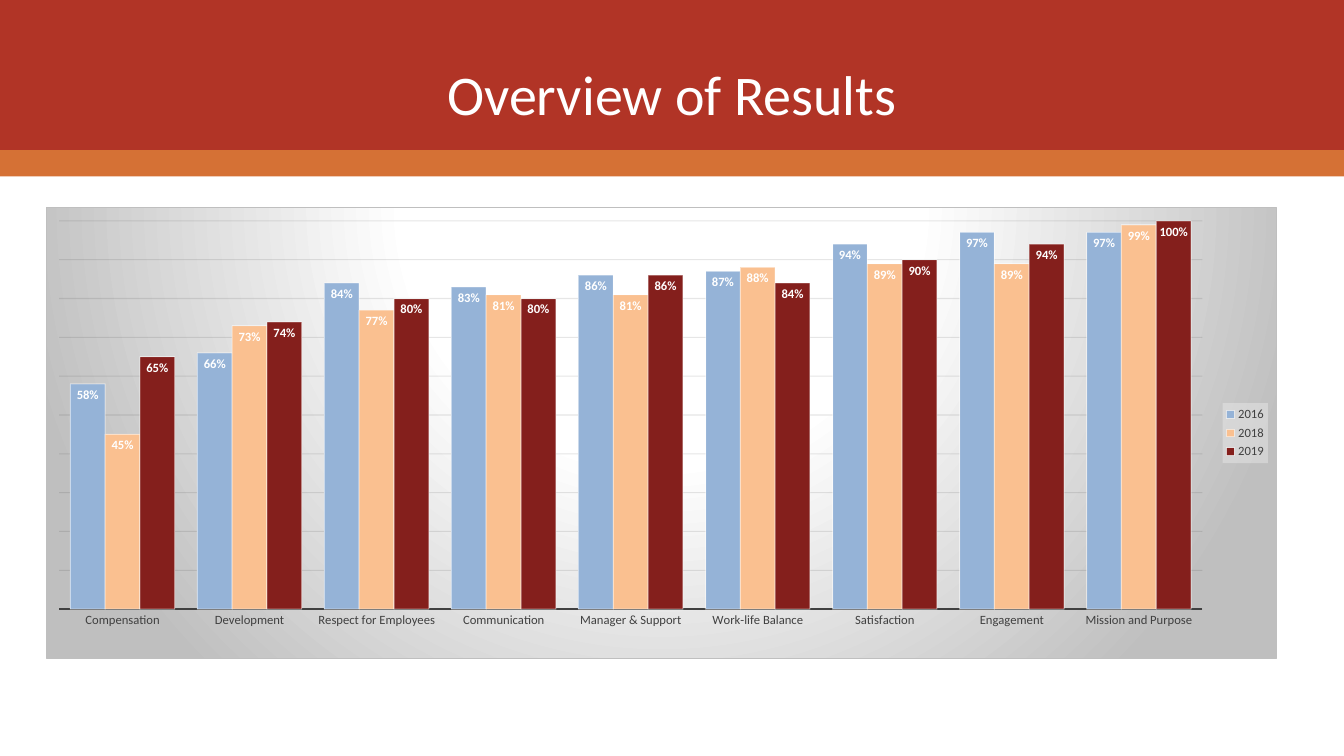
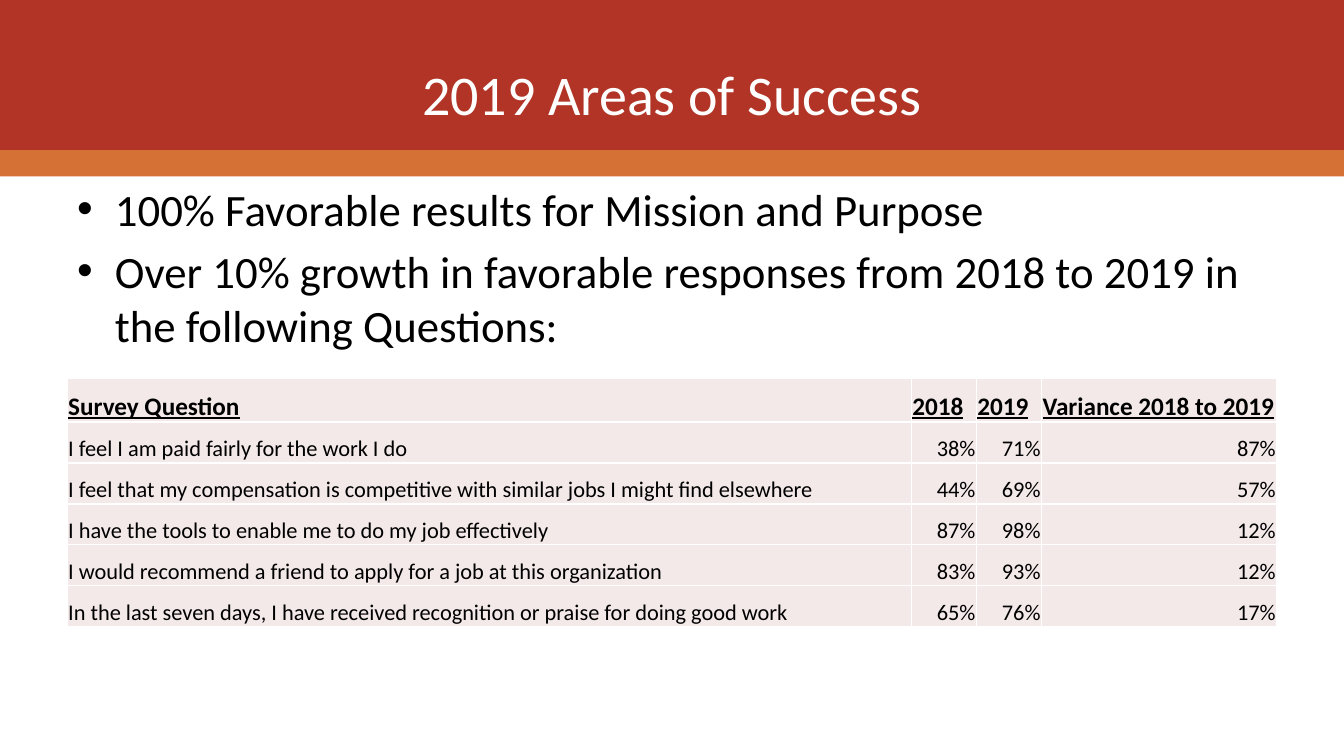
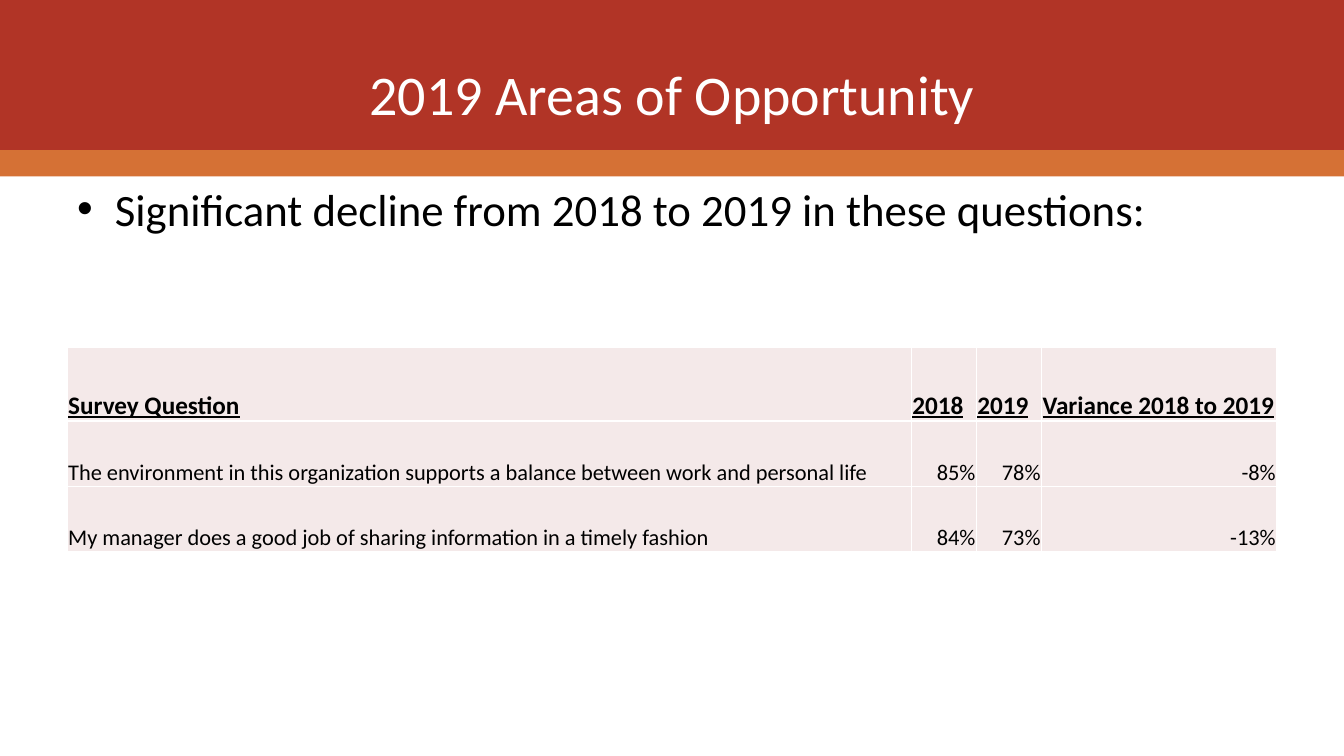
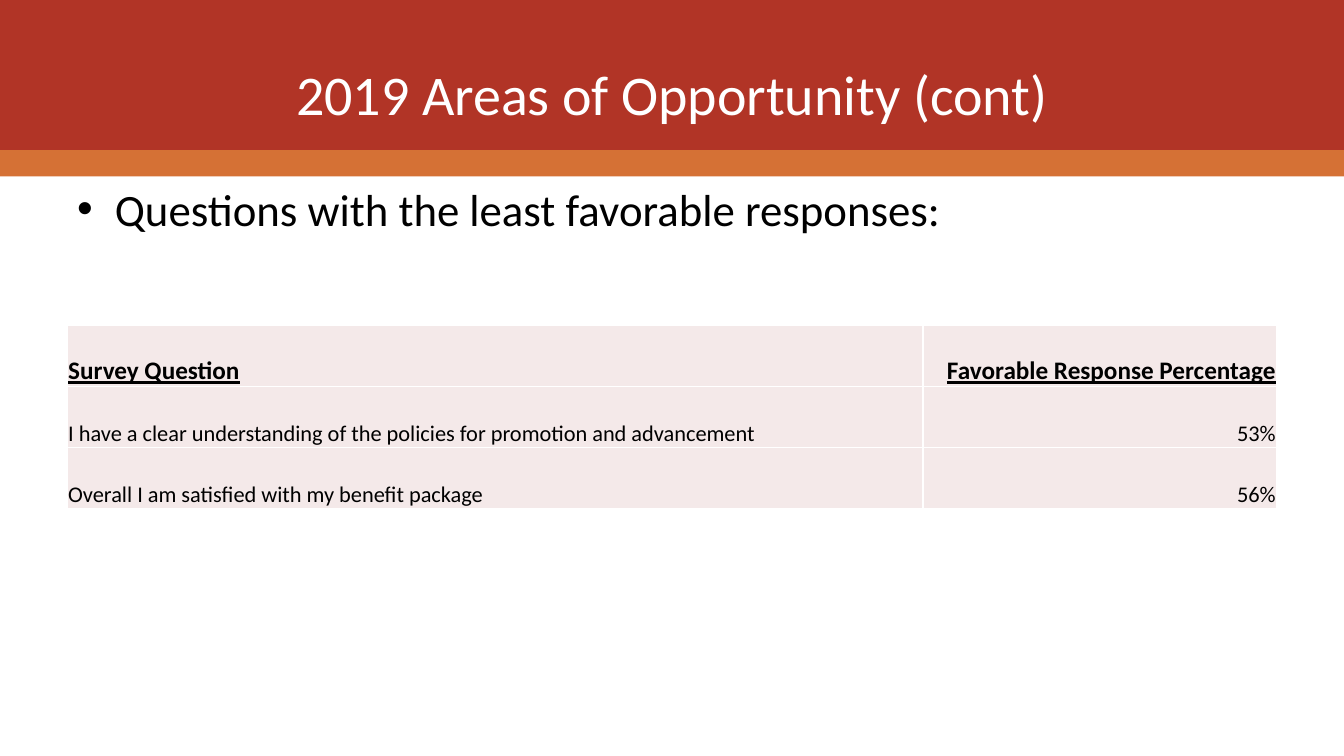
from lxml import etree
from pptx import Presentation
from pptx.chart.data import CategoryChartData
from pptx.dml.color import RGBColor
from pptx.enum.chart import XL_CHART_TYPE, XL_LABEL_POSITION, XL_LEGEND_POSITION, XL_TICK_MARK
from pptx.enum.shapes import MSO_SHAPE
from pptx.enum.text import MSO_ANCHOR, PP_ALIGN
from pptx.oxml import parse_xml
from pptx.oxml.ns import nsdecls, qn
from pptx.util import Pt

RECTANGLE = MSO_SHAPE.RECTANGLE
LEFT, CENTER, RIGHT = PP_ALIGN.LEFT, PP_ALIGN.CENTER, PP_ALIGN.RIGHT
TOP, MIDDLE, BOTTOM = MSO_ANCHOR.TOP, MSO_ANCHOR.MIDDLE, MSO_ANCHOR.BOTTOM
CLUSTERED = XL_CHART_TYPE.COLUMN_CLUSTERED
INSIDE_END = XL_LABEL_POSITION.INSIDE_END
LEGEND_RIGHT = XL_LEGEND_POSITION.RIGHT
NO_TICK = XL_TICK_MARK.NONE

EMU_PER_PX = 9525
WIDTH, HEIGHT = 1280, 720
MARGIN, CONTENT_WIDTH = 64, 1152
FONT = "Calibri"
COLORS = {
    "red": "B13426", "orange": "D57135", "white": "FFFFFF", "black": "000000",
    "cell": "F4E9E9", "dark": "404040", "grid": "0D0D0D", "edge": "BFBFBF",
    "legend": "F2F2F2", "2016": "95B3D7", "2018": "FAC090", "2019": "841F1C",
}
TITLE = {"size": Pt(40), "color": "white"}
BODY = {"size": Pt(32), "color": "black"}
HEADER = {"size": Pt(18), "color": "black", "bold": True, "underline": True}
ENTRY = {"size": Pt(16), "color": "black", "bold": False, "underline": False}
AXIS_TEXT = {"size": Pt(9), "color": "dark"}
VALUE_LABEL = {"size": Pt(9), "color": "white", "bold": True}


def px(length):
    return length * EMU_PER_PX


def rgb(name):
    return RGBColor.from_string(COLORS[name])


def set_font(font, style):
    font.name = FONT
    for attribute, value in style.items():
        if attribute == "color":
            font.color.rgb = rgb(value)
        else:
            setattr(font, attribute, value)


def set_line(line, color, points):
    line.color.rgb = rgb(color)
    line.width = Pt(points)


def set_alpha(colors, percent):
    for color in colors:
        etree.SubElement(color, qn("a:alpha"), val=str(percent * 1000))


class Deck:
    """Holds the shared style and the current slide."""

    def __init__(self):
        self.presentation = Presentation()
        self.presentation.slide_width = px(WIDTH)
        self.presentation.slide_height = px(HEIGHT)
        self.slide = None

    def new_slide(self, title):
        self.slide = self.presentation.slides.add_slide(self.presentation.slide_layouts[6])
        self.band(0, 152, "red")
        self.band(143, 25, "orange")
        self.text(29, 120, [title], TITLE, MIDDLE, CENTER)

    def band(self, top, height, color):
        band = self.slide.shapes.add_shape(RECTANGLE, 0, px(top), px(WIDTH), px(height))
        band.shadow.inherit = False
        band.fill.solid()
        band.fill.fore_color.rgb = rgb(color)
        band.line.fill.background()

    def text(self, top, height, lines, style, anchor, align, bullet=False):
        box = self.slide.shapes.add_textbox(px(MARGIN), px(top), px(CONTENT_WIDTH), px(height))
        frame = box.text_frame
        frame.word_wrap = True
        frame.vertical_anchor = anchor
        for index, line in enumerate(lines):
            paragraph = frame.paragraphs[0] if index == 0 else frame.add_paragraph()
            paragraph.alignment = align
            if index:
                paragraph.space_before = Pt(6)
            if bullet:
                properties = paragraph._p.get_or_add_pPr()
                properties.set("marL", str(px(36)))
                properties.set("indent", str(-px(36)))
                etree.SubElement(properties, qn("a:buFont"), typeface="Arial")
                etree.SubElement(properties, qn("a:buChar"), char="•")
            run = paragraph.add_run()
            run.text = line
            set_font(run.font, style)

    def bullets(self, *lines):
        self.text(168, 475, lines, BODY, TOP, LEFT, bullet=True)

    def table(self, top, columns, heights, rows, header_align=LEFT):
        frame = self.slide.shapes.add_table(
            len(rows), len(columns), px(MARGIN), px(top), px(sum(columns)), px(sum(heights)))
        table = frame.table
        table.horz_banding = False
        for column, width in zip(table.columns, columns):
            column.width = px(width)
        for row_index, (row, height, entries) in enumerate(zip(table.rows, heights, rows)):
            row.height = px(height)
            style, value_align = (ENTRY, RIGHT) if row_index else (HEADER, header_align)
            for column_index, (cell, entry) in enumerate(zip(row.cells, entries)):
                self.cell(cell, entry, style, value_align if column_index else LEFT)

    def cell(self, cell, entry, style, align):
        layout = {"margin_left": px(1), "margin_right": px(1), "margin_top": px(1),
                  "margin_bottom": 0, "vertical_anchor": BOTTOM}
        for attribute, value in layout.items():
            setattr(cell, attribute, value)
        cell.fill.solid()
        cell.fill.fore_color.rgb = rgb("cell")
        for position, side in enumerate(("lnL", "lnR", "lnT", "lnB")):
            cell._tc.tcPr.insert(position, parse_xml(
                f'<a:{side} {nsdecls("a")} w="{Pt(1)}"><a:solidFill>'
                f'<a:srgbClr val="{COLORS["white"]}"/></a:solidFill></a:{side}>'))
        paragraph = cell.text_frame.paragraphs[0]
        paragraph.alignment = align
        run = paragraph.add_run()
        run.text = entry
        set_font(run.font, style)

    def column_chart(self, left, top, width, height, categories, results):
        data = CategoryChartData(number_format="0%")
        data.categories = categories
        for year, shares in results.items():
            data.add_series(year, shares)
        chart = self.slide.shapes.add_chart(
            CLUSTERED, px(left), px(top), px(width), px(height), data).chart
        chart.has_title = False
        set_font(chart.font, {"size": Pt(10), "color": "black"})

        # Columns and their labels
        plot = chart.plots[0]
        plot.gap_width, plot.overlap, plot.vary_by_categories = 65, 0, False
        for series in plot.series:
            series.format.fill.solid()
            series.format.fill.fore_color.rgb = rgb(series.name)
            set_line(series.format.line, "white", 0.75)
            labels = series.data_labels
            label_format = {"show_value": True, "position": INSIDE_END,
                            "number_format": "0%", "number_format_is_linked": False}
            for attribute, value in label_format.items():
                setattr(labels, attribute, value)
            set_font(labels.font, VALUE_LABEL)

        # Axes
        set_font(chart.category_axis.tick_labels.font, AXIS_TEXT)
        chart.category_axis.major_tick_mark = NO_TICK
        set_line(chart.category_axis.format.line, "dark", 1.5)
        scale = {"minimum_scale": 0, "maximum_scale": 1, "major_unit": 0.1,
                 "has_major_gridlines": True, "visible": False}
        for attribute, value in scale.items():
            setattr(chart.value_axis, attribute, value)
        set_line(chart.value_axis.major_gridlines.format.line, "grid", 0.75)

        # Legend
        chart.has_legend = True
        chart.legend.position = LEGEND_RIGHT
        chart.legend.include_in_layout = False
        set_font(chart.legend.font, AXIS_TEXT)
        self.chart_surfaces(chart._chartSpace)

    def chart_surfaces(self, space):
        """Plot layout, transparency, legend panel and gradient background."""
        set_alpha(space.xpath(".//c:ser/c:spPr/a:ln//a:srgbClr"), 50)
        set_alpha(space.xpath(".//c:majorGridlines//a:srgbClr"), 10)
        plot_area = space.xpath(".//c:plotArea")[0]
        for layout in plot_area.findall(qn("c:layout")):
            plot_area.remove(layout)
        bounds = {"layoutTarget": "inner", "xMode": "edge", "yMode": "edge",
                  "x": 0.01, "y": 0.03, "w": 0.93, "h": 0.86}
        layout = etree.Element(qn("c:layout"))
        manual = etree.SubElement(layout, qn("c:manualLayout"))
        for name, value in bounds.items():
            etree.SubElement(manual, qn(f"c:{name}"), val=str(value))
        plot_area.insert(0, layout)

        panel = (f'<a:solidFill><a:srgbClr val="{COLORS["legend"]}">'
                 '<a:alpha val="39000"/></a:srgbClr></a:solidFill>')
        stops = "".join(
            f'<a:gs pos="{percent * 1000}"><a:srgbClr val="{COLORS[color]}"/></a:gs>'
            for percent, color in ((0, "white"), (39, "white"), (100, "edge")))
        background = (
            f'<a:gradFill><a:gsLst>{stops}</a:gsLst><a:path path="circle">'
            '<a:fillToRect l="50000" t="-80000" r="50000" b="180000"/></a:path></a:gradFill>'
            f'<a:ln w="{Pt(0.75)}"><a:solidFill><a:srgbClr val="{COLORS["edge"]}"/>'
            '</a:solidFill></a:ln>')
        for query, fill in ((".//c:legend/c:txPr", panel), ("./c:txPr", background)):
            space.xpath(query)[0].addprevious(
                parse_xml(f'<c:spPr {nsdecls("c", "a")}>{fill}</c:spPr>'))


def main():
    deck = Deck()
    variance_columns = (804, 62, 62, 224)
    variance_header = ("Survey Question", "2018", "2019", "Variance 2018 to 2019")

    # Overview
    deck.new_slide("Overview of Results")
    deck.column_chart(
        44, 197, 1172, 431,
        ("Compensation", "Development", "Respect for Employees", "Communication",
         "Manager & Support", "Work-life Balance", "Satisfaction", "Engagement",
         "Mission and Purpose"),
        {"2016": (0.58, 0.66, 0.84, 0.83, 0.86, 0.87, 0.94, 0.97, 0.97),
         "2018": (0.45, 0.73, 0.77, 0.81, 0.81, 0.88, 0.89, 0.89, 0.99),
         "2019": (0.65, 0.74, 0.8, 0.8, 0.86, 0.84, 0.9, 0.94, 1)})

    # Success
    deck.new_slide("2019 Areas of Success")
    deck.bullets(
        "100% Favorable results for Mission and Purpose",
        "Over 10% growth in favorable responses from 2018 to 2019 in the following Questions:")
    deck.table(360, variance_columns, [42] + [39] * 5, (
        variance_header,
        ("I feel I am paid fairly for the work I do", "38%", "71%", "87%"),
        ("I feel that my compensation is competitive with similar jobs I might find elsewhere",
         "44%", "69%", "57%"),
        ("I have the tools to enable me to do my job effectively", "87%", "98%", "12%"),
        ("I would recommend a friend to apply for a job at this organization",
         "83%", "93%", "12%"),
        ("In the last seven days, I have received recognition or praise for doing good work",
         "65%", "76%", "17%")))

    # Opportunity: declines
    deck.new_slide("2019 Areas of Opportunity")
    deck.bullets("Significant decline from 2018 to 2019 in these questions:")
    deck.table(331, variance_columns, (70, 62, 62), (
        variance_header,
        ("The environment in this organization supports a balance between work and personal life",
         "85%", "78%", "-8%"),
        ("My manager does a good job of sharing information in a timely fashion",
         "84%", "73%", "-13%")))

    # Opportunity: lowest scores
    deck.new_slide("2019 Areas of Opportunity (cont)")
    deck.bullets("Questions with the least favorable responses:")
    deck.table(310, (815, 337), (58, 58, 58), (
        ("Survey Question", "Favorable Response Percentage"),
        ("I have a clear understanding of the policies for promotion and advancement", "53%"),
        ("Overall I am satisfied with my benefit package", "56%")), header_align=RIGHT)

    deck.presentation.save("out.pptx")


if __name__ == "__main__":
    main()
